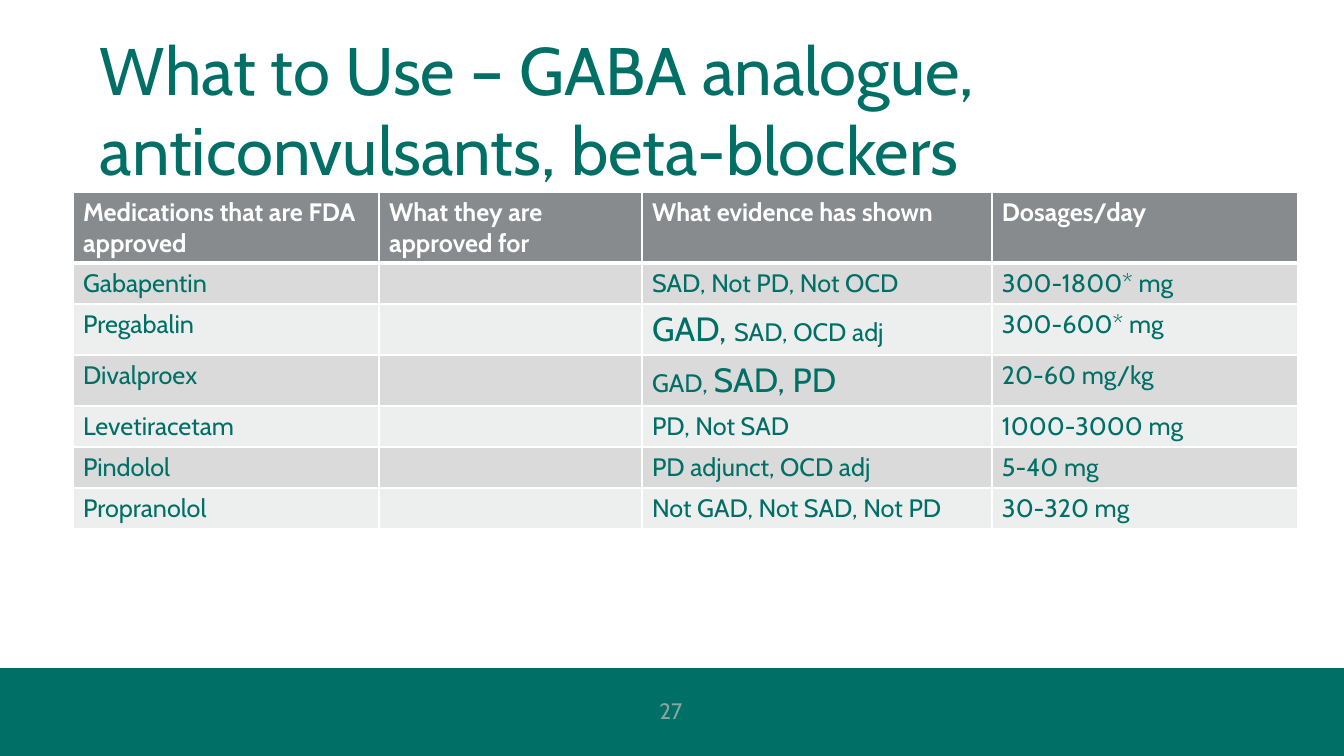
"""Build the slide on GABA analogues, anticonvulsants and beta-blockers."""
from lxml.etree import SubElement
from pptx import Presentation
from pptx.dml.color import RGBColor
from pptx.enum.shapes import MSO_SHAPE as Shape
from pptx.enum.text import MSO_ANCHOR as Anchor, PP_ALIGN as Align
from pptx.oxml.ns import qn
from pptx.util import Pt

PX = 914400 / 100.8
FONT = "Cabin"
GREEN = RGBColor(0x00, 0x6F, 0x66)
PALE_GREEN = RGBColor(0x8C, 0xA4, 0xA0)
GRAY = RGBColor(0x88, 0x8B, 0x8D)
BANDS = [RGBColor(0xED, 0xEE, 0xEE), RGBColor(0xDA, 0xDA, 0xDB)]
WHITE = RGBColor(0xFF, 0xFF, 0xFF)

COLUMN_WIDTHS = [306, 263, 350, 306]
ROW_HEIGHTS = [71, 41, 51, 51, 41, 41, 41]
ROWS = [
    ["Medications that are FDA approved", "What they are approved for",
     "What evidence has shown", "Dosages/day"],
    ["Gabapentin", "", "SAD, Not PD, Not OCD", "300-1800* mg"],
    ["Pregabalin", "", [("GAD, ", 24), ("SAD, OCD adj", 18)], "300-600* mg"],
    ["Divalproex", "", [("GAD, ", 18), ("SAD, PD", 24)], "20-60 mg/kg"],
    ["Levetiracetam", "", "PD, Not SAD", "1000-3000 mg"],
    ["Pindolol", "", "PD adjunct, OCD adj", "5-40 mg"],
    ["Propranolol", "", "Not GAD, Not SAD, Not PD", "30-320 mg"],
]


def px(*lengths):
    return [round(length * PX) for length in lengths]


def style(font, size, color, bold=False):
    font.name = FONT
    font.size = Pt(size)
    font.color.rgb = color
    font.bold = bold


deck = Presentation()
deck.slide_width, deck.slide_height = px(1344, 756)
slide = deck.slides.add_slide(deck.slide_layouts[6])

footer = slide.shapes.add_shape(Shape.RECTANGLE, *px(0, 668, 1344, 88))
footer.shadow.inherit = False
footer.fill.solid()
footer.fill.fore_color.rgb = GREEN
footer.line.fill.background()

labels = [
    ("27", (520, 691, 302, 40), 16, PALE_GREEN, Align.CENTER, Anchor.MIDDLE),
    ("What to Use – GABA analogue, anticonvulsants, beta-blockers",
     (90, 23, 1226, 89), 48, GREEN, Align.LEFT, Anchor.TOP),
]
for text, place, size, color, align, anchor in labels:
    box = slide.shapes.add_textbox(*px(*place))
    frame = box.text_frame
    frame.word_wrap = True
    frame.vertical_anchor = anchor
    frame.text = text
    para = frame.paragraphs[0]
    para.alignment = align
    style(para.runs[0].font, size, color)

table = slide.shapes.add_table(
    len(ROWS), len(COLUMN_WIDTHS),
    *px(73, 192, sum(COLUMN_WIDTHS), sum(ROW_HEIGHTS))).table
for column, width in zip(table.columns, px(*COLUMN_WIDTHS)):
    column.width = width
for row, height in zip(table.rows, px(*ROW_HEIGHTS)):
    row.height = height

for row_index, contents in enumerate(ROWS):
    header = row_index == 0
    border_widths = {"a:lnL": 1, "a:lnR": 1,
                     "a:lnT": 3 if row_index == 1 else 1,
                     "a:lnB": 3 if header else 1}
    for column_index, content in enumerate(contents):
        cell = table.cell(row_index, column_index)
        properties = cell._tc.get_or_add_tcPr()
        for tag, width in border_widths.items():
            border = SubElement(properties, qn(tag), w=str(Pt(width)))
            fill = SubElement(border, qn("a:solidFill"))
            SubElement(fill, qn("a:srgbClr"), val=str(WHITE))
        cell.fill.solid()
        cell.fill.fore_color.rgb = GRAY if header else BANDS[row_index % 2]
        para = cell.text_frame.paragraphs[0]
        spans = [(content, 18)] if isinstance(content, str) else content
        for text, size in spans:
            span = para.add_run()
            span.text = text
            style(span.font, size, WHITE if header else GREEN, header)

deck.save("out.pptx")
